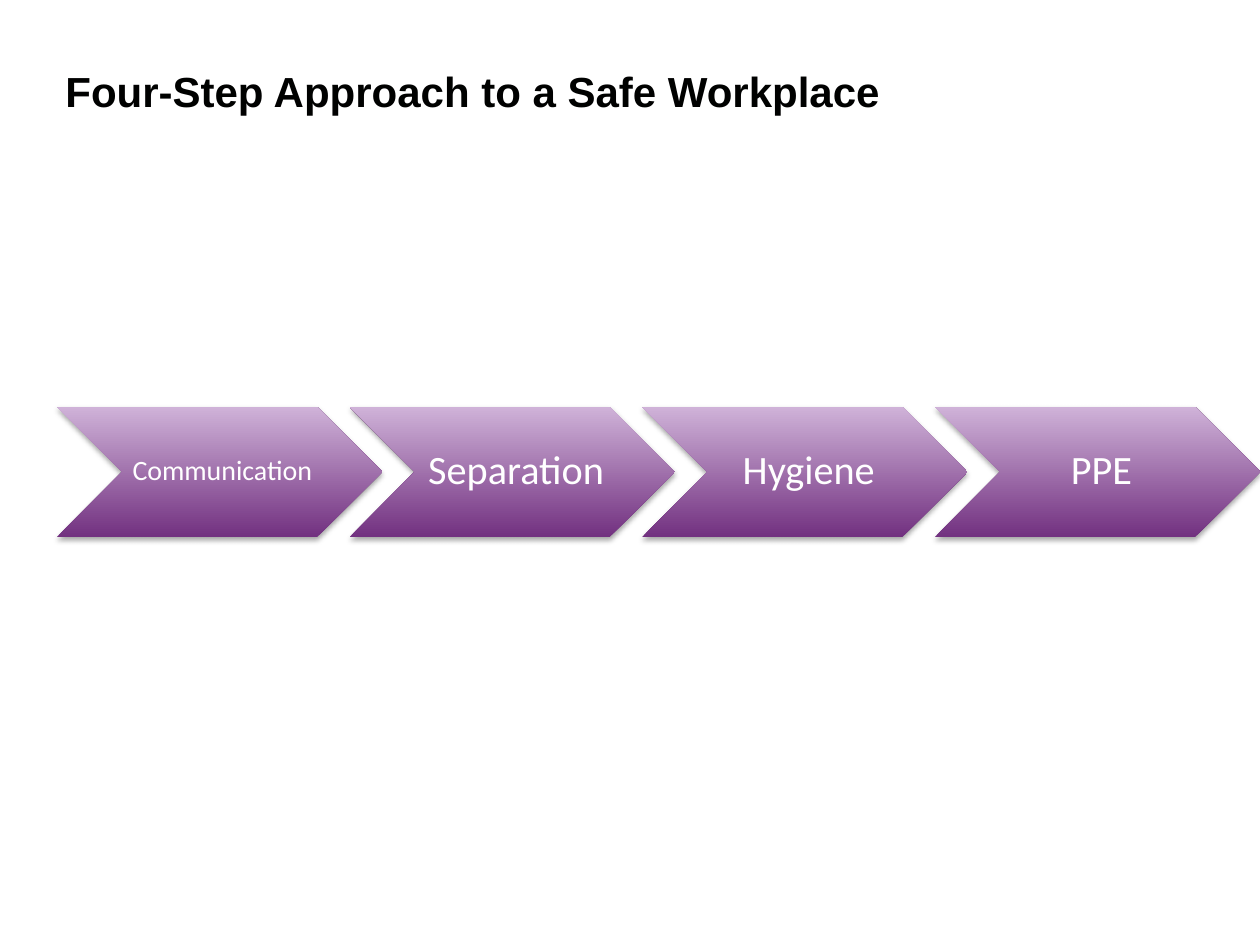
"""Build the four-step safe workplace slide."""
import pptx
import pptx.dml.color
import pptx.enum.shapes
import pptx.enum.text
import pptx.oxml
import pptx.util

Pt = pptx.util.Pt
SHADOW = (
    '<a:effectLst xmlns:a="http://schemas.openxmlformats.org/drawingml/2006/main">'
    '<a:outerShdw blurRad="39400" dist="22900" dir="5400000" rotWithShape="0">'
    '<a:srgbClr val="000000"><a:alpha val="35000"/></a:srgbClr>'
    '</a:outerShdw></a:effectLst>'
)


def rgb(value):
    return pptx.dml.color.RGBColor.from_string(value)


def add_run(p, text, size, font, color, bold=False):
    r = p.add_run()
    r.text = text
    r.font.size = Pt(size)
    r.font.name = font
    r.font.bold = bold
    r.font.color.rgb = rgb(color)


prs = pptx.Presentation()
prs.slide_width, prs.slide_height = Pt(720), Pt(540)
s = prs.slides.add_slide(prs.slide_layouts[5])

title = s.shapes.title
title.left, title.top, title.width, title.height = Pt(30.2), Pt(36), Pt(594), Pt(33.8)
tf = title.text_frame
tf.word_wrap = True
tf.auto_size = pptx.enum.text.MSO_AUTO_SIZE.NONE
tf.vertical_anchor = pptx.enum.text.MSO_ANCHOR.BOTTOM
p = tf.paragraphs[0]
p.alignment = pptx.enum.text.PP_ALIGN.LEFT
add_run(p, "Four-Step Approach to a Safe Workplace", 24, "Arial", "000100", True)

steps = [("Communication", 16), ("Separation", 23), ("Hygiene", 23), ("PPE", 23)]
left, top, width, height = 32.6, 232.5, 185.8, 74.3
pitch = width * 0.9
group = s.shapes.add_group_shape()
for i, (step, size) in enumerate(steps):
    x = left + i * pitch
    sp = group.shapes.add_shape(
        pptx.enum.shapes.MSO_SHAPE.CHEVRON, Pt(x), Pt(top), Pt(width), Pt(height))
    sp.fill.gradient()
    sp.fill.gradient_angle = 90
    for stop, color, position in zip(sp.fill.gradient_stops, ("723180", "CFB2D8"), (0, 1)):
        stop.color.rgb = rgb(color)
        stop.position = position
    sp.line.fill.background()
    sp._element.spPr.append(pptx.oxml.parse_xml(SHADOW))

    box = group.shapes.add_textbox(
        Pt(x + height / 2), Pt(top), Pt(width - height), Pt(height))
    tf = box.text_frame
    tf.word_wrap = True
    tf.vertical_anchor = pptx.enum.text.MSO_ANCHOR.MIDDLE
    tf.margin_left = Pt(size * 0.3)
    tf.margin_top = tf.margin_right = tf.margin_bottom = Pt(size * 0.1)
    p = tf.paragraphs[0]
    p.alignment = pptx.enum.text.PP_ALIGN.CENTER
    p.line_spacing = 0.9
    add_run(p, step, size, "Calibri", "FFFFFF")

prs.save("out.pptx")
